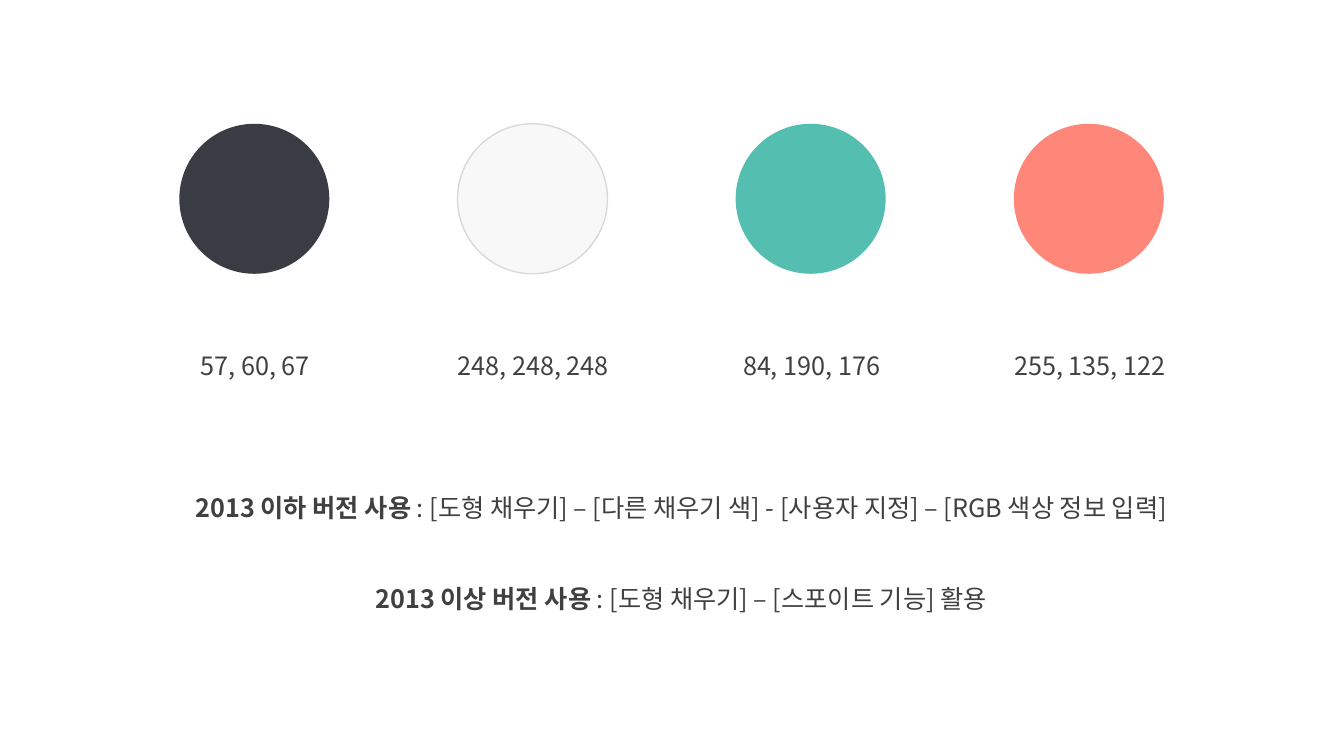
from lxml import etree
from pptx import Presentation
from pptx.dml.color import RGBColor
from pptx.enum.shapes import MSO_SHAPE
from pptx.enum.text import MSO_AUTO_SIZE, PP_ALIGN
from pptx.oxml.ns import qn
from pptx.util import Cm, Pt

SWATCHES = [(57, 60, 67), (248, 248, 248), (84, 190, 176), (255, 135, 122)]
OUTLINED = (248, 248, 248)
NOTES = [
    ("2013 이하 버전 사용 ",
     ": [도형 채우기] – [다른 채우기 색] - [사용자 지정] – [RGB 색상 정보 입력]"),
    ("2013 이상 버전 사용 ", ": [도형 채우기] – [스포이트 기능] 활용"),
]

FONT = "Noto Sans CJK KR"
TEXT = RGBColor(0x40, 0x40, 0x40)
OUTLINE = RGBColor(0xD9, 0xD9, 0xD9)
OVAL = MSO_SHAPE.OVAL
CENTER = PP_ALIGN.CENTER
GROW = MSO_AUTO_SIZE.SHAPE_TO_FIT_TEXT

CIRCLE_LEFT, CIRCLE_TOP, CIRCLE_SIZE = 4.52, 3.12, 3.78
LABEL_LEFT, LABEL_TOP, LABEL_WIDTH = 3.68, 8.33, 5.51
NOTE_LEFT, NOTE_TOP, NOTE_WIDTH = 3.18, 11.89, 27.97
SWATCH_STEP, NOTE_STEP, LINE_HEIGHT = 7.01, 2.31, 1.27


def add_circle(slide, left, rgb):
    s = slide.shapes.add_shape(OVAL, Cm(left), Cm(CIRCLE_TOP),
                               Cm(CIRCLE_SIZE), Cm(CIRCLE_SIZE))
    s.shadow.inherit = False
    s.fill.solid()
    s.fill.fore_color.rgb = RGBColor(*rgb)
    if rgb == OUTLINED:
        s.line.color.rgb = OUTLINE
        s.line.width = Pt(1)
    else:
        s.line.fill.background()


def add_text(slide, left, top, width, runs):
    s = slide.shapes.add_textbox(Cm(left), Cm(top), Cm(width), Cm(LINE_HEIGHT))
    tf = s.text_frame
    tf.word_wrap = True
    tf.auto_size = GROW
    p = tf.paragraphs[0]
    p.alignment = CENTER
    p.line_spacing = 1.5
    for text, bold in runs:
        r = p.add_run()
        r.text = text
        r.font.size = Pt(18)
        r.font.bold = bold
        r.font.color.rgb = TEXT
        r.font.name = FONT
        etree.SubElement(r.font._element, qn("a:ea")).set("typeface", FONT)


def main():
    """Build a slide of four theme colours with notes on applying them."""
    prs = Presentation()
    prs.slide_width, prs.slide_height = Cm(33.87), Cm(19.05)
    slide = prs.slides.add_slide(prs.slide_layouts[6])
    for i, rgb in enumerate(SWATCHES):
        offset = i * SWATCH_STEP
        add_circle(slide, CIRCLE_LEFT + offset, rgb)
        label = ", ".join(str(v) for v in rgb)
        add_text(slide, LABEL_LEFT + offset, LABEL_TOP, LABEL_WIDTH,
                 [(label, False)])
    for i, (version, steps) in enumerate(NOTES):
        add_text(slide, NOTE_LEFT, NOTE_TOP + i * NOTE_STEP, NOTE_WIDTH,
                 [(version, True), (steps, False)])
    prs.save("out.pptx")


if __name__ == "__main__":
    main()
